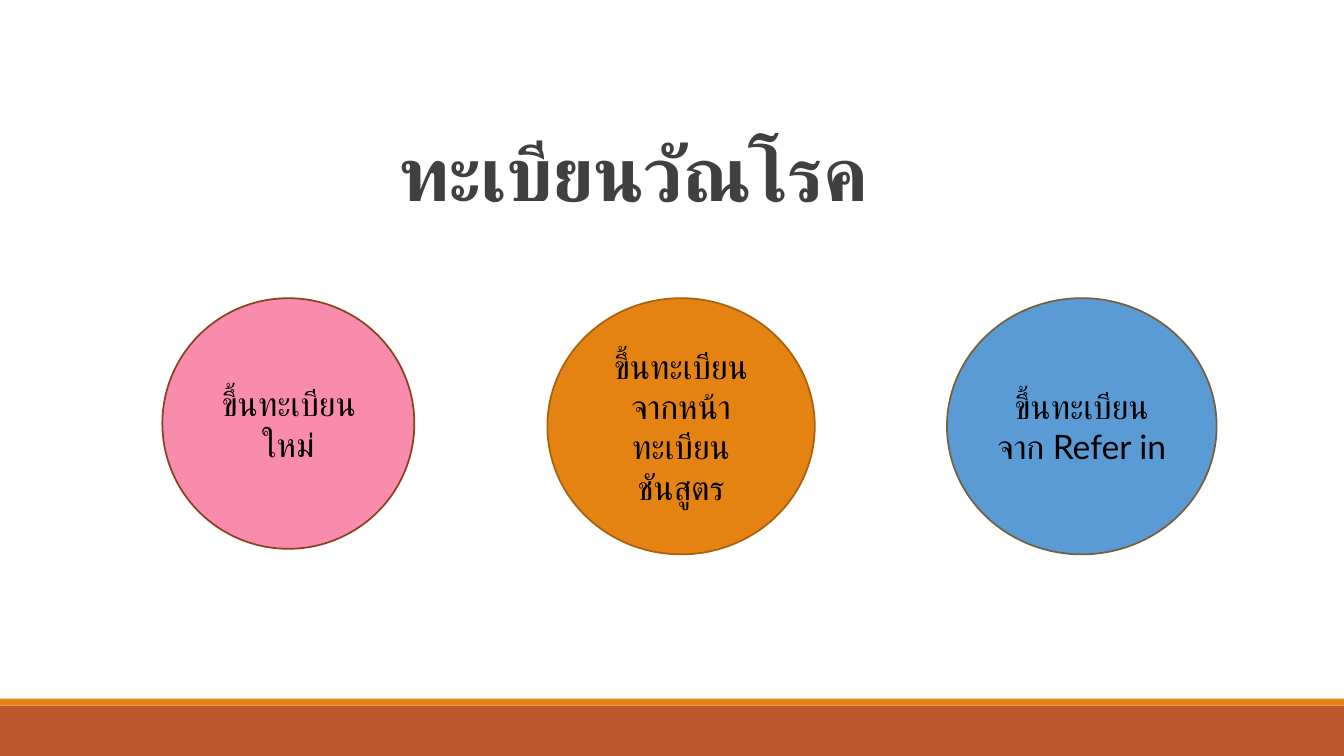
"""Build the tuberculosis registry slide with three registration routes."""
import pptx
import pptx.util
import pptx.dml.color
import pptx.enum.shapes
import pptx.enum.text

Pt = pptx.util.Pt
SHAPE = pptx.enum.shapes.MSO_SHAPE
ALIGN = pptx.enum.text.PP_ALIGN
ANCHOR = pptx.enum.text.MSO_ANCHOR

FONT = "Lato"
WIDTH, HEIGHT = 960, 540
COLORS = {
    "footer": "BD582C", "stripe": "E48312", "title": "404040", "text": "000000",
    "pink": "F98BAD", "pink_line": "8C4121",
    "orange": "E48312", "orange_line": "A9610D",
    "blue": "5B9BD5", "blue_line": "736140",
}
TITLE = "ทะเบียนวัณโรค"
TITLE_BOX = (278.6, 77, 415.4, 81.4)
BANDS = [("footer", 504, 36), ("stripe", 499, 5)]
CIRCLE_TOP = 213
CIRCLES = [
    ("ขึ้นทะเบียนใหม่", "pink", 116, 180, 179),
    ("ขึ้นทะเบียนจากหน้าทะเบียนชันสูตร", "orange", 391, 191, 183),
    ("ขึ้นทะเบียนจาก Refer in", "blue", 676.4, 192.6, 183),
]


def rgb(name):
    return pptx.dml.color.RGBColor.from_string(COLORS[name])


def add_filled(s, kind, box, fill, line=None):
    sp = s.shapes.add_shape(kind, *map(Pt, box))
    sp.shadow.inherit = False
    sp.fill.solid()
    sp.fill.fore_color.rgb = rgb(fill)
    if line:
        sp.line.color.rgb = rgb(line)
        sp.line.width = Pt(1.25)
    else:
        sp.line.fill.background()
    return sp


def write(sp, text, size, color, anchor, align, bold=False):
    tf = sp.text_frame
    tf.word_wrap = True
    tf.vertical_anchor = anchor
    tf.text = text
    p = tf.paragraphs[0]
    p.alignment = align
    r = p.runs[0]
    r.font.name = FONT
    r.font.size = Pt(size)
    r.font.bold = bold
    r.font.color.rgb = rgb(color)
    return p


def main():
    prs = pptx.Presentation()
    prs.slide_width, prs.slide_height = Pt(WIDTH), Pt(HEIGHT)
    s = prs.slides.add_slide(prs.slide_layouts[6])

    for color, top, height in BANDS:
        add_filled(s, SHAPE.RECTANGLE, (0, top, WIDTH, height), color)

    title = s.shapes.add_textbox(*map(Pt, TITLE_BOX))
    p = write(title, TITLE, 54, "title", ANCHOR.BOTTOM, ALIGN.LEFT, True)
    p.line_spacing = 0.85
    p.runs[0].font._element.set("spc", "-50")

    for text, color, left, width, height in CIRCLES:
        sp = add_filled(s, SHAPE.OVAL, (left, CIRCLE_TOP, width, height), color, f"{color}_line")
        write(sp, text, 24, "text", ANCHOR.MIDDLE, ALIGN.CENTER)

    prs.save("out.pptx")


if __name__ == "__main__":
    main()
